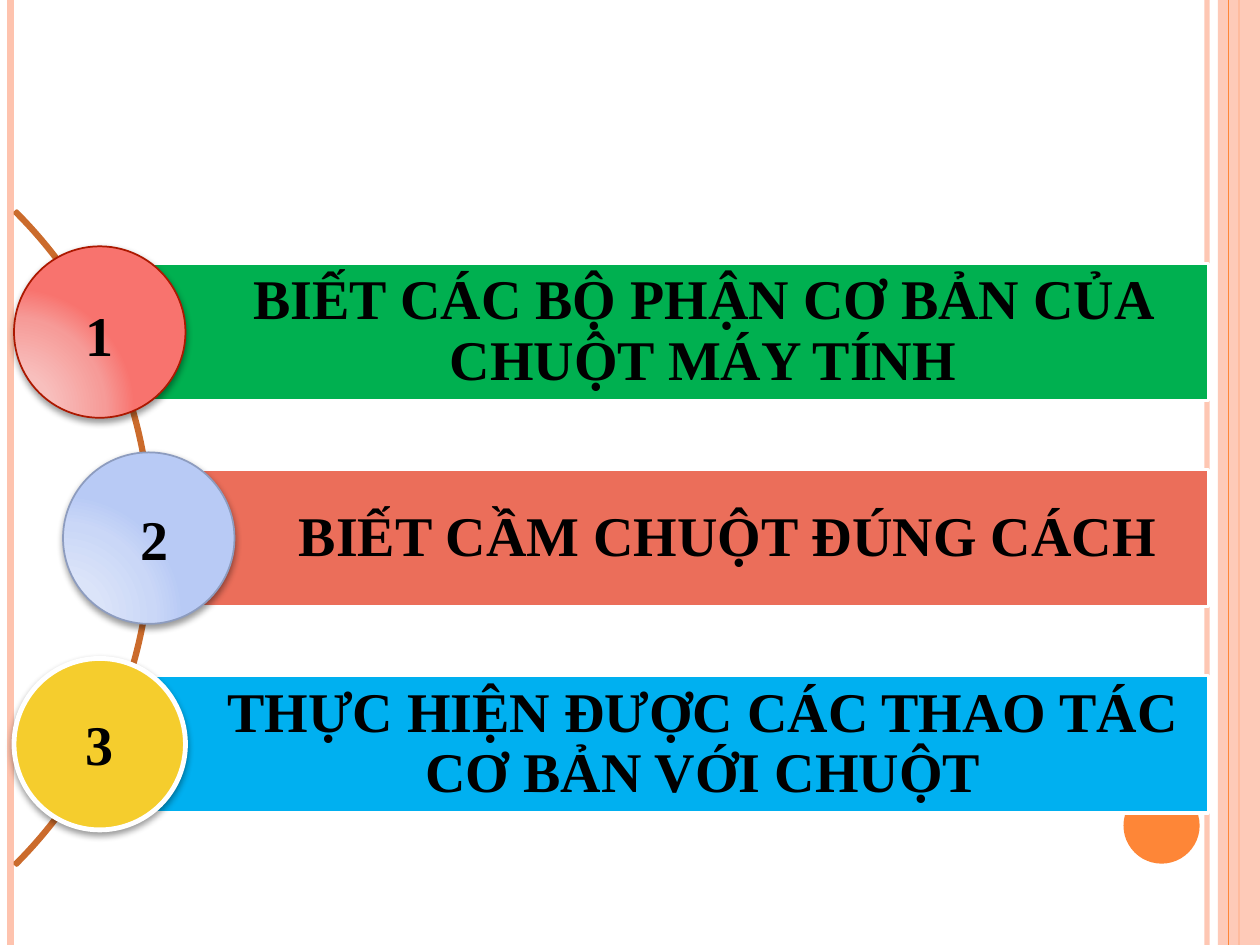
from lxml.etree import SubElement
from pptx import Presentation
from pptx.dml.color import RGBColor
from pptx.enum.shapes import MSO_CONNECTOR, MSO_SHAPE
from pptx.enum.text import MSO_ANCHOR, MSO_AUTO_SIZE, PP_ALIGN
from pptx.oxml.ns import qn
from pptx.util import Pt

WHITE = RGBColor(0xFF, 0xFF, 0xFF)
BLACK = RGBColor(0x00, 0x00, 0x00)
PEACH = RGBColor(0xFE, 0xC3, 0xAE)
ORANGE = RGBColor(0xFE, 0x86, 0x37)
BROWN = RGBColor(0xCB, 0x6B, 0x2C)
GREEN = RGBColor(0x00, 0xB0, 0x50)
CORAL = RGBColor(0xEB, 0x6E, 0x5A)
BLUE = RGBColor(0x00, 0xB0, 0xF0)
YELLOW = RGBColor(0xF5, 0xCD, 0x2D)
DARK_RED = RGBColor(0xAC, 0x18, 0x00)
GREY_BLUE = RGBColor(0x8D, 0x9C, 0xBF)
RED_SHADES = [RGBColor(0xF8, 0xC5, 0xC3), RGBColor(0xF8, 0xBF, 0xBD),
              RGBColor(0xF6, 0x9B, 0x98), RGBColor(0xF8, 0x73, 0x6E)]
BLUE_SHADES = [RGBColor(0xDE, 0xE6, 0xFA), RGBColor(0xDB, 0xE4, 0xF9),
               RGBColor(0xCA, 0xD7, 0xF7), RGBColor(0xB8, 0xCA, 0xF5)]
YELLOW_SHADES = [YELLOW]

SLIDE_WIDTH, SLIDE_HEIGHT = 720, 540
BAR_TOP, BAR_PITCH, BAR_HEIGHT, BAR_RIGHT = 150.5, 117.75, 78.5, 690.5
CIRCLE_SIZE = 98
GOALS = [
    ("BIẾT CÁC BỘ PHẬN CƠ BẢN CỦA CHUỘT MÁY TÍNH", 57, GREEN,
     RED_SHADES, DARK_RED, 1, (30, 168, 54, 46), PP_ALIGN.CENTER),
    ("BIẾT CẦM CHUỘT ĐÚNG CÁCH", 85, CORAL,
     BLUE_SHADES, GREY_BLUE, 1, (73.5, 285, 44.5, 46), PP_ALIGN.LEFT),
    ("THỰC HIỆN ĐƯỢC CÁC THAO TÁC CƠ BẢN VỚI CHUỘT", 57, BLUE,
     YELLOW_SHADES, WHITE, 2.75, (42, 402, 42, 46), PP_ALIGN.LEFT),
]


class SlideBuilder:
    """Draw styled elements on the current slide, measured in points."""

    font_format = {"name": "Times New Roman", "size": Pt(32), "bold": True}
    bar_frame = {"margin_left": Pt(62.5), "margin_right": Pt(6.5),
                 "margin_top": Pt(6.5), "margin_bottom": Pt(6.5),
                 "vertical_anchor": MSO_ANCHOR.MIDDLE, "word_wrap": True}
    number_frame = {"word_wrap": True,
                    "auto_size": MSO_AUTO_SIZE.SHAPE_TO_FIT_TEXT}

    def __init__(self, slide):
        self.slide = slide

    def apply_format(self, target, format_values):
        for name, value in format_values.items():
            setattr(target, name, value)

    def add_text(self, shape, text, frame_format, paragraph_format):
        self.apply_format(shape.text_frame, frame_format)
        paragraph = shape.text_frame.paragraphs[0]
        self.apply_format(paragraph, paragraph_format)
        run = paragraph.add_run()
        run.text = text
        self.apply_format(run.font, self.font_format)
        run.font.color.rgb = BLACK

    def set_alpha(self, properties, percent):
        color = next(properties.iter(qn("a:srgbClr")))
        SubElement(color, qn("a:alpha"), val=str(percent * 1000))

    def add_vertical_line(self, left, color, width, alpha=100):
        line = self.slide.shapes.add_connector(
            MSO_CONNECTOR.STRAIGHT, Pt(left), Pt(0), Pt(left), Pt(SLIDE_HEIGHT))
        line.line.color.rgb = color
        line.line.width = Pt(width)
        properties = line._element.spPr
        if alpha < 100:
            self.set_alpha(properties, alpha)
        SubElement(properties, qn("a:effectLst"))

    def add_shape(self, kind, box, fill=None, line=None, width=0, alpha=100):
        shape = self.slide.shapes.add_shape(kind, *map(Pt, box))
        if fill is None:
            shape.fill.background()
        else:
            shape.fill.solid()
            shape.fill.fore_color.rgb = fill
        if alpha < 100:
            self.set_alpha(shape._element.spPr, alpha)
        if line is None:
            shape.line.fill.background()
        else:
            shape.line.color.rgb = line
            shape.line.width = Pt(width)
        shape.shadow.inherit = False
        return shape

    def add_arc(self, box, color, width):
        arc = self.add_shape(MSO_SHAPE.BLOCK_ARC, box, line=color, width=width)
        for index, value in enumerate((189, 27, 0.003)):
            arc.adjustments[index] = value

    def add_bar(self, text, box, color):
        bar = self.add_shape(MSO_SHAPE.RECTANGLE, box, color, WHITE, 2)
        self.add_text(bar, text, self.bar_frame,
                      {"alignment": PP_ALIGN.CENTER, "line_spacing": 0.9})

    def add_circle(self, box, shades, line, width):
        circle = self.add_shape(MSO_SHAPE.OVAL, box, shades[-1], line, width)
        if len(shades) > 1:
            self.shade(circle, shades)
        effects = circle._element.spPr.find(qn("a:effectLst"))
        shadow = SubElement(effects, qn("a:outerShdw"), blurRad=str(Pt(4)),
                            dist=str(Pt(2)), dir="5400000", rotWithShape="0")
        color = SubElement(shadow, qn("a:srgbClr"), val=str(BLACK))
        SubElement(color, qn("a:alpha"), val="40000")

    def shade(self, shape, shades):
        shape.fill.gradient()
        gradient = shape._element.spPr.find(qn("a:gradFill"))
        for child in list(gradient):
            gradient.remove(child)
        stops = SubElement(gradient, qn("a:gsLst"))
        for position, shade in zip((0, 30, 75, 100), shades):
            stop = SubElement(stops, qn("a:gs"), pos=str(position * 1000))
            SubElement(stop, qn("a:srgbClr"), val=str(shade))
        circular = SubElement(gradient, qn("a:path"), path="circle")
        SubElement(circular, qn("a:fillToRect"),
                   l="5000", t="100000", r="120000", b="10000")

    def add_number(self, number, box, alignment):
        text_box = self.slide.shapes.add_textbox(*map(Pt, box))
        self.add_text(text_box, str(number), self.number_frame,
                      {"alignment": alignment})


def main():
    presentation = Presentation()
    presentation.slide_width = Pt(SLIDE_WIDTH)
    presentation.slide_height = Pt(SLIDE_HEIGHT)
    slide = presentation.slides.add_slide(presentation.slide_layouts[6])
    builder = SlideBuilder(slide)

    builder.add_vertical_line(689.75, PEACH, 3, 93)
    builder.add_vertical_line(6, PEACH, 4.5)
    builder.add_vertical_line(708, ORANGE, 1.5)
    builder.add_shape(MSO_SHAPE.RECTANGLE, (696, 0, 24, SLIDE_HEIGHT),
                      PEACH, alpha=87)
    builder.add_vertical_line(702, ORANGE, 0.75)
    builder.add_shape(MSO_SHAPE.OVAL, (642, 450, 43.5, 43.5), ORANGE)
    builder.add_arc((-441.5, 43.25, 528.5, 528.5), BROWN, 2)

    for index, (text, left, color, shades, line, width, _, _) in enumerate(GOALS):
        top = BAR_TOP + index * BAR_PITCH
        circle_top = top + (BAR_HEIGHT - CIRCLE_SIZE) / 2
        builder.add_bar(text, (left, top, BAR_RIGHT - left, BAR_HEIGHT), color)
        builder.add_circle(
            (left - CIRCLE_SIZE / 2, circle_top, CIRCLE_SIZE, CIRCLE_SIZE),
            shades, line, width)

    for number, (*_, box, alignment) in enumerate(GOALS, start=1):
        builder.add_number(number, box, alignment)

    presentation.save("out.pptx")


if __name__ == "__main__":
    main()
